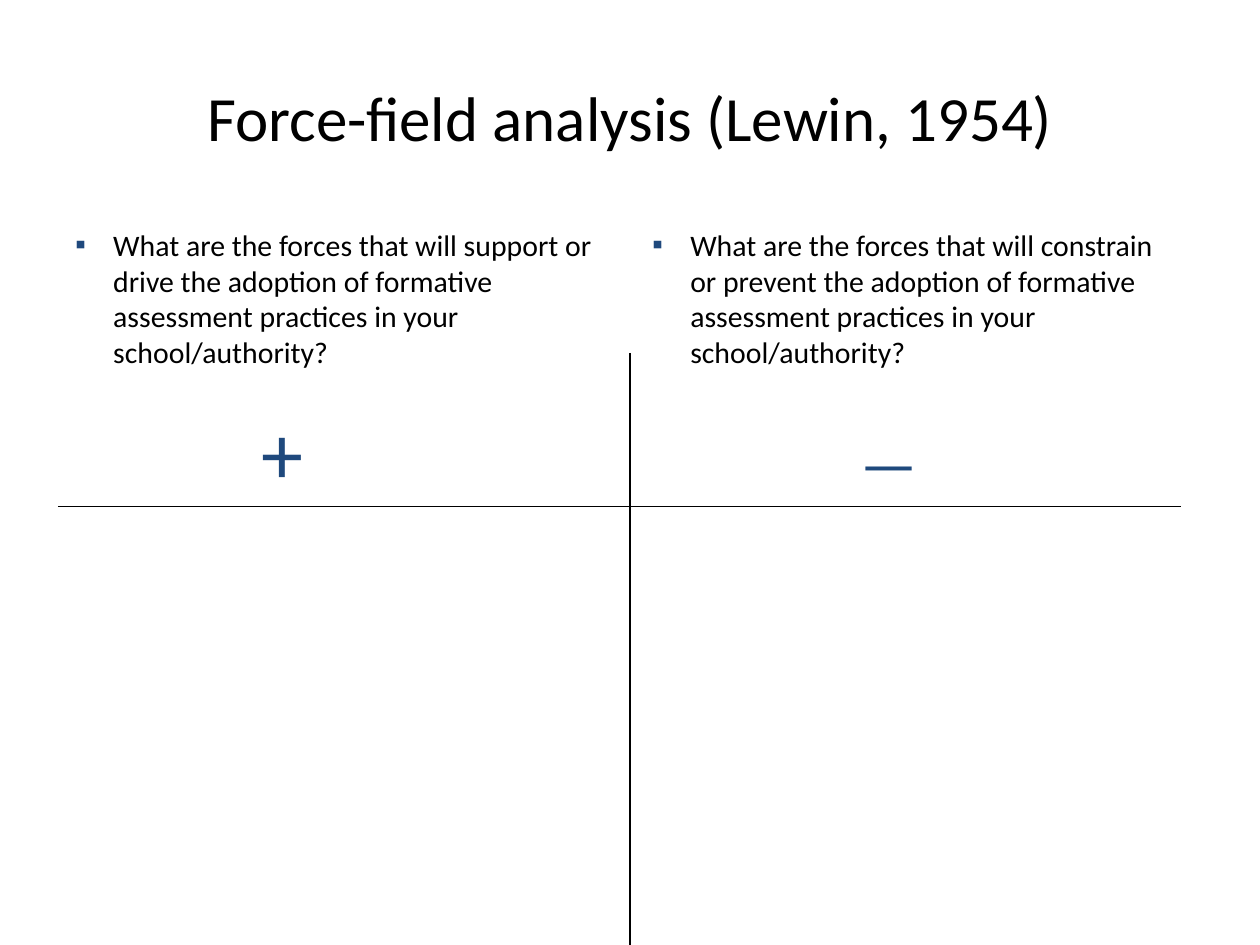
"""Build a force-field analysis slide with supporting and constraining forces."""
from lxml import etree
from pptx import Presentation
from pptx import util as u
from pptx.dml.color import RGBColor
from pptx.enum import shapes, text
from pptx.oxml.ns import qn

COLOURS = {"ink": "000000", "accent": "1F497D", "paper": "FFFFFF"}
FONT = "Calibri"
QUESTIONS = [
    (0.5, "What are the forces that will support or drive the adoption of "
          "formative assessment practices in your school/authority?"),
    (5.08, "What are the forces that will constrain or prevent the adoption of "
           "formative assessment practices in your school/authority?"),
]


def add_text(page, area, words, size, colour="ink", wrap=True):
    """Add a one-run text box and return it."""
    box = page.shapes.add_textbox(*(u.Inches(value) for value in area))
    box.text_frame.word_wrap = wrap
    span = box.text_frame.paragraphs[0].add_run()
    span.text = words
    span.font.name = FONT
    span.font.size = u.Pt(size)
    span.font.color.rgb = RGBColor.from_string(COLOURS[colour])
    return box


def add_title(page, words):
    """Add the centred slide heading."""
    box = add_text(page, (0.5, 0.3, 9, 1.25), words, 36)
    box.text_frame.vertical_anchor = text.MSO_ANCHOR.MIDDLE
    box.text_frame.paragraphs[0].alignment = text.PP_ALIGN.CENTER


def add_question(page, left, words):
    """Add a question with a square bullet and a hanging indent."""
    box = add_text(page, (left, 1.75, 4.42, 4.95), words, 17)
    para = box.text_frame.paragraphs[0]
    para.space_before = u.Pt(3.4)
    props = para._p.get_or_add_pPr()
    props.set("marL", str(u.Inches(0.3)))
    props.set("indent", str(u.Inches(-0.3)))
    tint = etree.SubElement(props, qn("a:buClr"))
    etree.SubElement(tint, qn("a:srgbClr"), val=COLOURS["accent"])
    etree.SubElement(props, qn("a:buFont"), typeface=FONT)
    etree.SubElement(props, qn("a:buChar"), char="▪")


def add_sign(page, area, sign, size, wrap):
    """Add a plus or minus sign in a box that fits its text."""
    box = add_text(page, area, sign, size, "accent", wrap)
    box.text_frame.auto_size = text.MSO_AUTO_SIZE.SHAPE_TO_FIT_TEXT


def add_axis(page, *ends):
    """Add a thin straight line between two points."""
    line = page.shapes.add_connector(
        shapes.MSO_CONNECTOR.STRAIGHT, *(u.Inches(value) for value in ends))
    line.line.color.rgb = RGBColor.from_string(COLOURS["ink"])
    line.line.width = u.Pt(1)
    etree.SubElement(line._element.spPr, qn("a:effectLst"))


def main():
    """Assemble and save the slide."""
    deck = Presentation()
    deck.slide_width, deck.slide_height = u.Inches(10), u.Inches(7.5)
    page = deck.slides.add_slide(deck.slide_layouts[6])
    page.background.fill.solid()
    page.background.fill.fore_color.rgb = RGBColor.from_string(COLOURS["paper"])
    add_title(page, "Force-field analysis (Lewin, 1954)")
    for left, words in QUESTIONS:
        add_question(page, left, words)
    add_axis(page, 0.46, 4.02, 9.37, 4.02)
    add_axis(page, 5, 2.8, 5, 7.5)
    add_sign(page, (1.98, 3.13, 1.17, 0.9), "+", 48, True)
    add_sign(page, (6.73, 3.31, 0.72, 0.7), "—", 36, False)
    deck.save("out.pptx")


if __name__ == "__main__":
    main()
